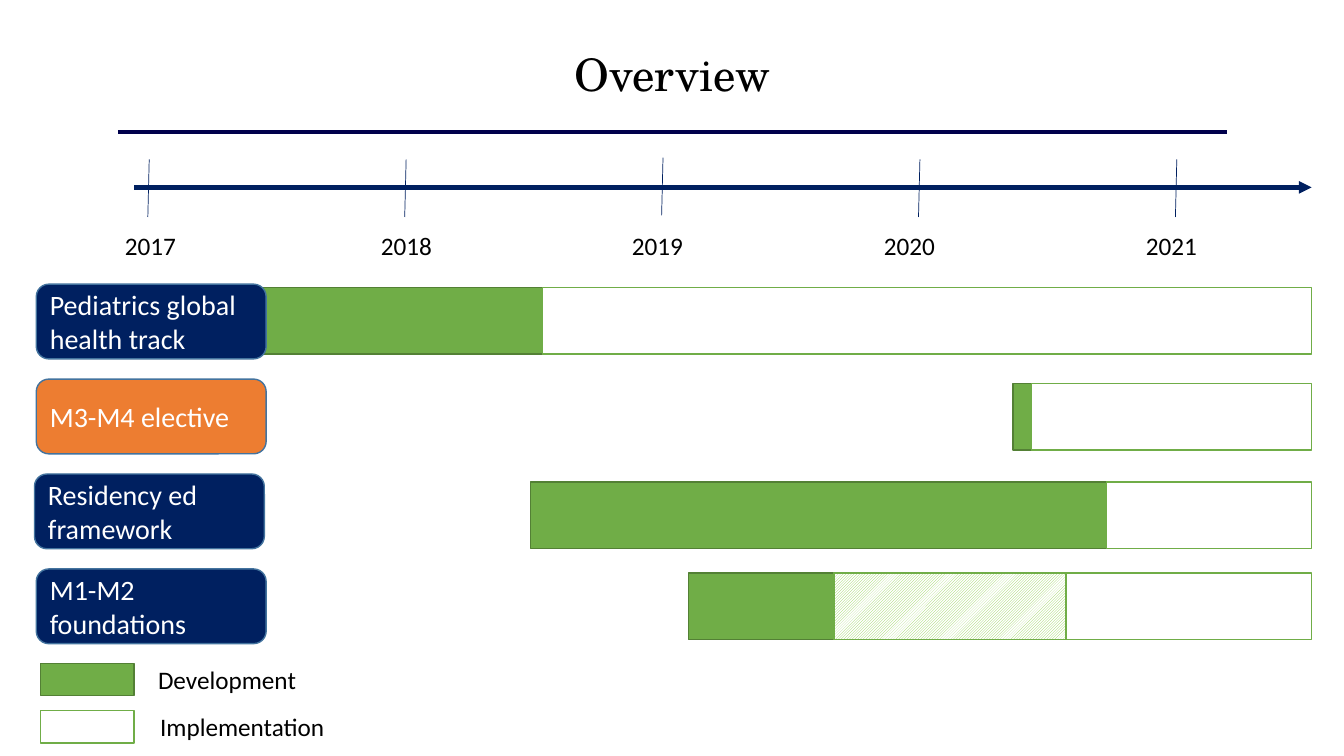
from dataclasses import dataclass
from itertools import pairwise

from lxml import etree
from pptx import Presentation
from pptx.dml.color import RGBColor
from pptx.enum.dml import MSO_PATTERN
from pptx.enum.shapes import MSO_CONNECTOR, MSO_SHAPE
from pptx.enum.text import MSO_ANCHOR, MSO_AUTO_SIZE, PP_ALIGN
from pptx.oxml.ns import qn
from pptx.util import Pt

RECT = MSO_SHAPE.RECTANGLE
ROUNDED = MSO_SHAPE.ROUNDED_RECTANGLE
STRAIGHT = MSO_CONNECTOR.STRAIGHT
HATCH = MSO_PATTERN.LIGHT_UPWARD_DIAGONAL
LEFT, CENTER = PP_ALIGN.LEFT, PP_ALIGN.CENTER
TOP, MIDDLE = MSO_ANCHOR.TOP, MSO_ANCHOR.MIDDLE
NO_FIT, GROW = MSO_AUTO_SIZE.NONE, MSO_AUTO_SIZE.SHAPE_TO_FIT_TEXT


@dataclass(frozen=True)
class Theme:
    title_font: str = "TeX Gyre Schola"
    body_font: str = "Calibri"
    title_size: int = 32
    label_size: int = 20
    text_size: int = 18
    black: str = "000000"
    white: str = "FFFFFF"
    rule: str = "00004C"
    navy: str = "002060"
    orange: str = "ED7D31"
    label_line: str = "43739E"
    green: str = "70AD47"
    dark_green: str = "538035"
    hatch: str = "92D050"


THEME = Theme()


@dataclass(frozen=True)
class Phase:
    fill: str
    line: str
    hatched: bool = False


DEVELOPMENT = Phase(THEME.green, THEME.dark_green)
IMPLEMENTATION = Phase(THEME.white, THEME.green)
PILOT = Phase(THEME.hatch, THEME.green, hatched=True)


@dataclass(frozen=True)
class Year:
    text: str
    left: float
    top: float = 160.6
    tick_top: float = 113.8


@dataclass(frozen=True)
class Track:
    name: str
    bar_top: float
    edges: tuple[float, ...]
    phases: tuple[Phase, ...] = (DEVELOPMENT, IMPLEMENTATION)
    color: str = THEME.navy
    left: float = 25.9


@dataclass(frozen=True)
class LegendItem:
    text: str
    phase: Phase
    top: float
    text_left: float


BAR_END = 936.9
YEARS = (
    Year("2017", 82.1),
    Year("2018", 265),
    Year("2019", 444.2, 161.3, 112.6),
    Year("2020", 624.2, 161.3),
    Year("2021", 811.4),
)
TRACKS = (
    Track("Pediatrics global health track", 205.2, (185.8, 387.4, BAR_END)),
    Track("M3-M4 elective", 273.8, (723.7, 737, BAR_END), color=THEME.orange),
    Track("Residency ed framework", 344.2, (379, 790.4, BAR_END), left=24.6),
    Track("M1-M2 foundations", 409.2, (491.8, 595.6, 761.5, BAR_END),
          (DEVELOPMENT, PILOT, IMPLEMENTATION)),
)
LEGEND = (
    LegendItem("Development", DEVELOPMENT, 473.8, 105.8),
    LegendItem("Implementation", IMPLEMENTATION, 507.7, 107.3),
)


def rgb(color: str) -> RGBColor:
    return RGBColor.from_string(color)


def write(s, text: str, size: float, color: str, font: str = THEME.body_font,
          align=LEFT, anchor=MIDDLE, fit=NO_FIT):
    tf = s.text_frame
    tf.word_wrap, tf.auto_size, tf.vertical_anchor = True, fit, anchor
    p = tf.paragraphs[0]
    p.alignment = align
    r = p.add_run()
    r.text = text
    r.font.name, r.font.size = font, Pt(size)
    r.font.color.rgb = rgb(color)
    return p


def add_box(slide, kind, left: float, top: float, width: float, height: float,
            fill: str, line: str | None = None):
    s = slide.shapes.add_shape(kind, Pt(left), Pt(top), Pt(width), Pt(height))
    s.shadow.inherit = False
    s.fill.solid()
    s.fill.fore_color.rgb = rgb(fill)
    if line:
        s.line.color.rgb = rgb(line)
        s.line.width = Pt(1)
    else:
        s.line.fill.background()
    return s


def add_phase(slide, phase: Phase, left: float, top: float, width: float, height: float) -> None:
    s = add_box(slide, RECT, left, top, width, height, phase.fill, phase.line)
    if phase.hatched:
        s.fill.patterned()
        s.fill.pattern = HATCH
        s.fill.fore_color.rgb = rgb(phase.fill)
        s.fill.back_color.rgb = rgb(THEME.white)


def add_line(slide, x1: float, y1: float, x2: float, y2: float,
             color: str, width: float, arrow: bool = False) -> None:
    c = slide.shapes.add_connector(STRAIGHT, Pt(x1), Pt(y1), Pt(x2), Pt(y2))
    c.line.color.rgb = rgb(color)
    c.line.width = Pt(width)
    if arrow:
        etree.SubElement(c.line._get_or_add_ln(), qn("a:tailEnd"), type="triangle")
    etree.SubElement(c._element.spPr, qn("a:effectLst"))


def add_title(slide) -> None:
    s = slide.shapes.title
    s.left, s.top, s.width, s.height = Pt(46.8), Pt(33.8), Pt(866.9), Pt(45.4)
    p = write(s, "Overview", THEME.title_size, THEME.black, THEME.title_font, CENTER, TOP)
    p.line_spacing = 0.9
    add_line(slide, 84.2, 94.3, 876.2, 94.3, THEME.rule, 2.25)


def add_timeline(slide) -> None:
    add_line(slide, 95.8, 133.9, BAR_END, 133.9, THEME.navy, 3, arrow=True)
    for i, year in enumerate(YEARS):
        x = 106.6 + i * 183.5
        add_line(slide, x, year.tick_top, x - 1, year.tick_top + 41.2, THEME.navy, 0.5)
        s = slide.shapes.add_textbox(Pt(year.left), Pt(year.top), Pt(94.3), Pt(29.5))
        write(s, year.text, THEME.text_size, THEME.black, anchor=TOP, fit=GROW)


def add_tracks(slide) -> None:
    for i, track in enumerate(TRACKS):
        for phase, (start, end) in zip(track.phases, pairwise(track.edges)):
            add_phase(slide, phase, start, track.bar_top, end - start, 47.7)
        s = add_box(slide, ROUNDED, track.left, 203 + i * 67.8, 164.2, 53.4,
                    track.color, THEME.label_line)
        write(s, track.name, THEME.label_size, THEME.white)


def add_legend(slide) -> None:
    for item in LEGEND:
        add_phase(slide, item.phase, 28.8, item.top, 67, 23)
        s = add_box(slide, RECT, item.text_left, item.top, 140, 23, THEME.white)
        write(s, item.text, THEME.text_size, THEME.black)


def main() -> None:
    prs = Presentation()
    prs.slide_width, prs.slide_height = Pt(960), Pt(540)
    slide = prs.slides.add_slide(prs.slide_layouts.get_by_name("Title Only"))
    add_title(slide)
    add_timeline(slide)
    add_tracks(slide)
    add_legend(slide)
    prs.save("out.pptx")


if __name__ == "__main__":
    main()
